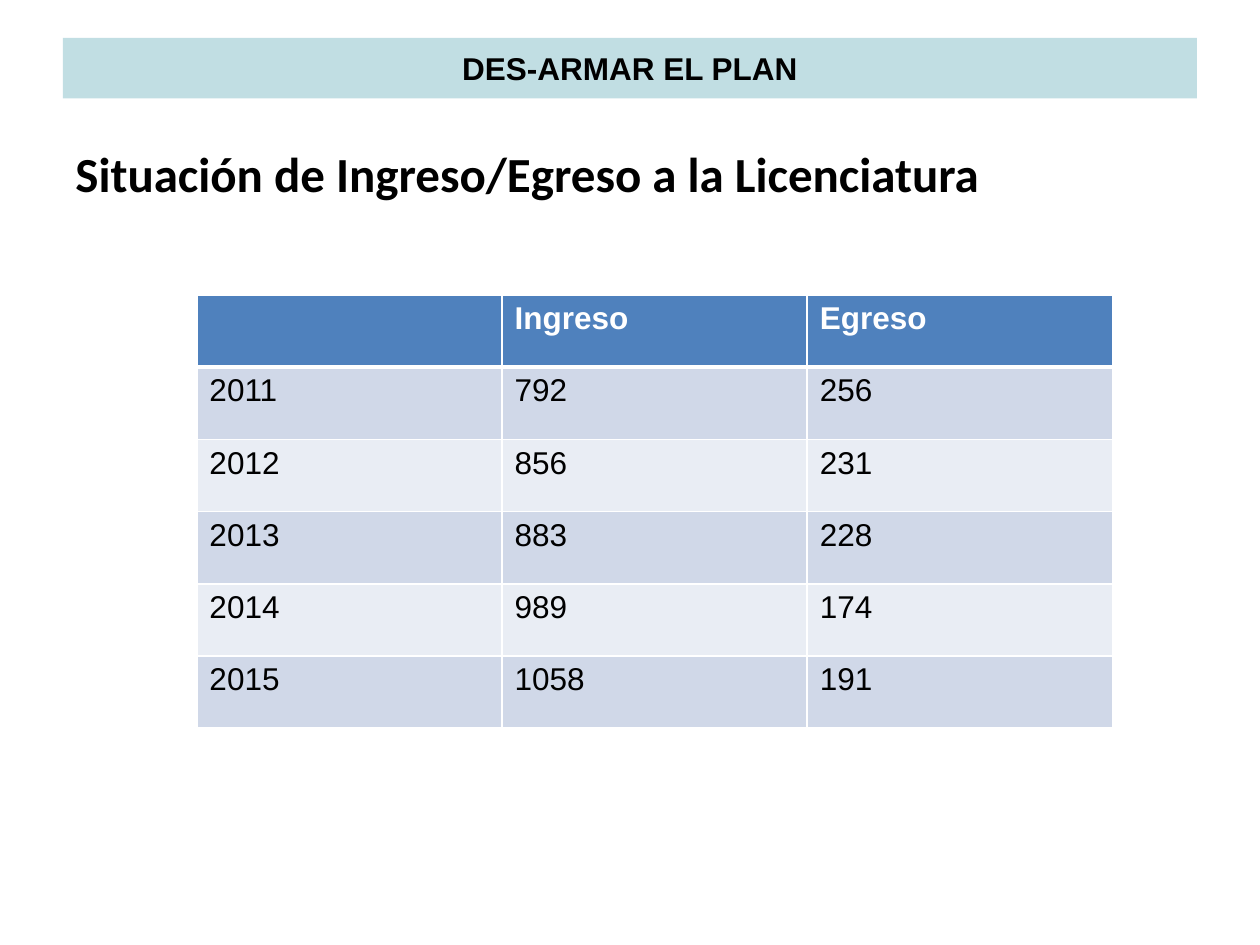
"""Build the slide on admissions and graduations of the degree."""
from lxml import etree
from pptx import Presentation
from pptx import util as u
from pptx.dml import color
from pptx.enum import shapes, text
from pptx.oxml import ns

ROWS = [
    ("", "Ingreso", "Egreso"),
    ("2011", "792", "256"),
    ("2012", "856", "231"),
    ("2013", "883", "228"),
    ("2014", "989", "174"),
    ("2015", "1058", "191"),
]
HEADER_FILL = "4F81BD"
BAND_FILLS = ("E9EDF4", "D0D8E8")
WHITE, BLACK = "FFFFFF", "000000"


def rgb(value):
    """Return the colour for a hex string."""
    return color.RGBColor.from_string(value)


def points(*values):
    """Return lengths given in points."""
    return [u.Pt(value) for value in values]


def write(frame, words, hue, **formats):
    """Write one paragraph and apply its font values."""
    paragraph = frame.paragraphs[0]
    run = paragraph.add_run()
    run.text = words
    for name, value in formats.items():
        setattr(run.font, name, value)
    run.font.color.rgb = rgb(hue)
    return paragraph


def add_banner(slide, words):
    """Add the filled title bar."""
    shape = slide.shapes.add_shape(
        shapes.MSO_SHAPE.RECTANGLE, *points(36, 21.6, 648, 34.6))
    shape.shadow.inherit = False
    shape.fill.solid()
    shape.fill.fore_color.rgb = rgb("C1DEE3")
    shape.line.fill.background()
    shape.text_frame.vertical_anchor = text.MSO_ANCHOR.MIDDLE
    paragraph = write(shape.text_frame, words, BLACK,
                      name="Arial", size=u.Pt(18), bold=True)
    paragraph.alignment = text.PP_ALIGN.CENTER


def add_heading(slide, words):
    """Add the heading with a hanging indent."""
    shape = slide.shapes.add_textbox(*points(36, 78.5, 644.4, 365.8))
    shape.text_frame.word_wrap = True
    paragraph = write(shape.text_frame, words, BLACK,
                      name="Calibri", size=u.Pt(28), bold=True)
    properties = paragraph._p.get_or_add_pPr()
    properties.set("marL", str(u.Pt(27)))
    properties.set("indent", str(u.Pt(-27)))


def set_borders(cell, widths):
    """Draw white borders of the given widths around a cell."""
    properties = cell._tc.get_or_add_tcPr()
    for side, width in widths.items():
        line = etree.SubElement(properties, ns.qn(f"a:ln{side}"), w=str(u.Pt(width)))
        fill = etree.SubElement(line, ns.qn("a:solidFill"))
        etree.SubElement(fill, ns.qn("a:srgbClr"), val=WHITE)


def add_figures(slide, rows):
    """Add the table with a header row and banded years."""
    frame = slide.shapes.add_table(
        len(rows), len(rows[0]), *points(112.5, 168.5, 523.2, 247.8))
    for row_index, row in enumerate(rows):
        is_header = row_index == 0
        for column_index, words in enumerate(row):
            cell = frame.table.cell(row_index, column_index)
            set_borders(cell, {"L": 1, "R": 1,
                               "T": 3 if row_index == 1 else 1,
                               "B": 3 if is_header else 1})
            cell.fill.solid()
            cell.fill.fore_color.rgb = rgb(
                HEADER_FILL if is_header else BAND_FILLS[row_index % 2])
            if words:
                write(cell.text_frame, words, WHITE if is_header else BLACK,
                      name="Arial", size=u.Pt(18), bold=is_header)


def main():
    """Build and save the presentation."""
    presentation = Presentation()
    presentation.slide_width, presentation.slide_height = points(720, 540)
    slide = presentation.slides.add_slide(presentation.slide_layouts[6])
    add_banner(slide, "DES-ARMAR EL PLAN")
    add_heading(slide, "Situación de Ingreso/Egreso a la Licenciatura")
    add_figures(slide, ROWS)
    presentation.save("out.pptx")


if __name__ == "__main__":
    main()
